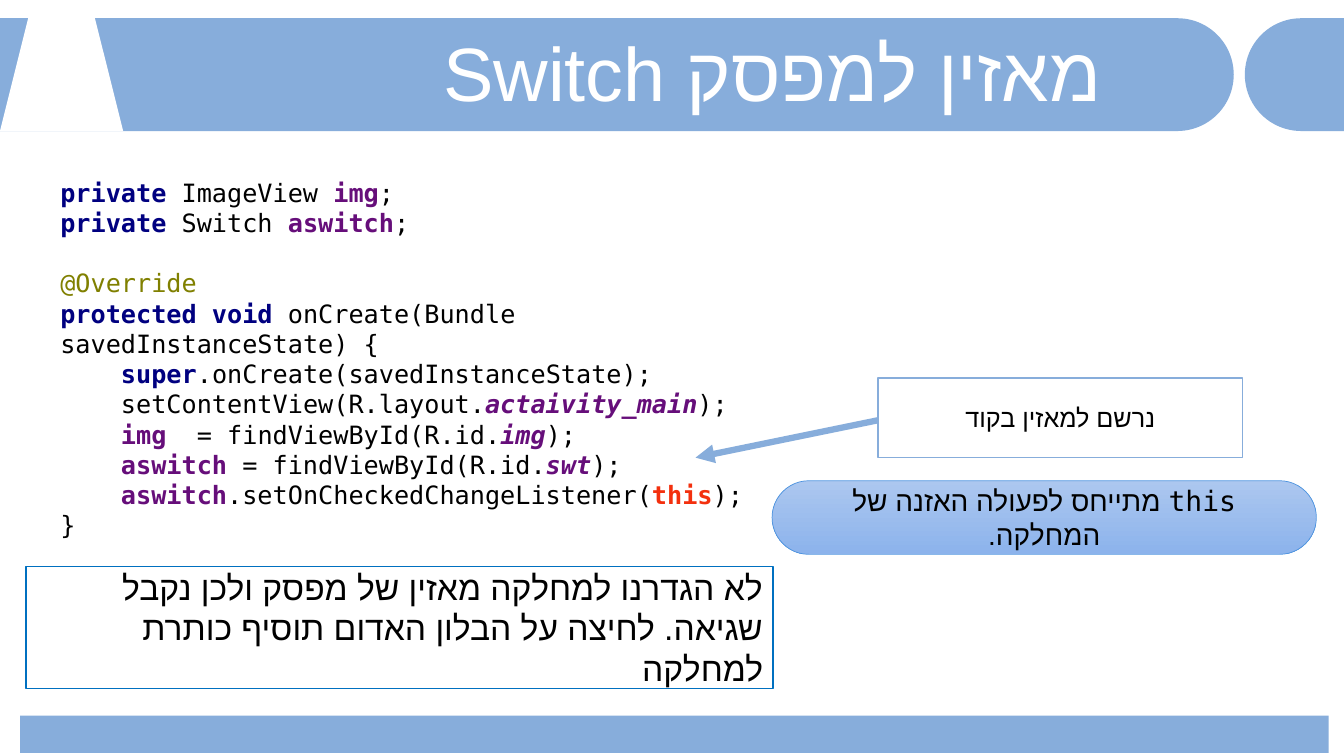
from dataclasses import dataclass
from math import cos, pi, sin

from lxml import etree
from pptx import Presentation
from pptx.dml.color import RGBColor
from pptx.enum.shapes import MSO_CONNECTOR, MSO_SHAPE
from pptx.enum.text import MSO_ANCHOR, MSO_AUTO_SIZE, PP_ALIGN
from pptx.oxml.ns import qn
from pptx.util import Pt

RECTANGLE = MSO_SHAPE.RECTANGLE
TRAPEZOID = MSO_SHAPE.TRAPEZOID
ROUNDED = MSO_SHAPE.ROUNDED_RECTANGLE
STRAIGHT = MSO_CONNECTOR.STRAIGHT
MIDDLE = MSO_ANCHOR.MIDDLE
FIXED_SIZE = MSO_AUTO_SIZE.NONE
GROW_TO_TEXT = MSO_AUTO_SIZE.SHAPE_TO_FIT_TEXT
LEFT, CENTER, RIGHT = PP_ALIGN.LEFT, PP_ALIGN.CENTER, PP_ALIGN.RIGHT

SLIDE_WIDTH, SLIDE_HEIGHT = 960, 540
BAND_TOP, BAND_HEIGHT = 13, 80.6
BLUE, WHITE, BLACK = "87ADDB", "FFFFFF", "000000"
SANS, MONO = "Arial", "DejaVu Sans Mono"
CODE_SIZE = 18
CODE_LINE = 21.6
CODE_INDENT = 43.35


@dataclass(frozen=True)
class Box:
    left: float
    top: float
    width: float
    height: float
    preset: int = RECTANGLE
    fill: str = WHITE
    line: str = ""
    line_width: float = 1


@dataclass(frozen=True)
class HebrewText:
    text: str
    size: float
    font: str = SANS
    color: str = BLACK
    alignment: int = CENTER


@dataclass(frozen=True)
class Token:
    text: str
    color: str = BLACK
    bold: bool = False
    italic: bool = False


@dataclass(frozen=True)
class CodeLine:
    tokens: tuple
    indented: bool = False
    blank_above: bool = False


def keyword(text: str) -> Token:
    return Token(text, "000080", True)


def field(text: str) -> Token:
    return Token(text, "660E7A", True)


def resource(text: str) -> Token:
    return Token(text, "660E7A", True, True)


CODE = (
    CodeLine((keyword("private "), Token("ImageView "), field("img"), Token(";"))),
    CodeLine((keyword("private "), Token("Switch "), field("aswitch"), Token(";"))),
    CodeLine((Token("@Override", "808000"),), blank_above=True),
    CodeLine((keyword("protected void "), Token("onCreate(Bundle savedInstanceState) {"))),
    CodeLine((keyword("super"), Token(".onCreate(savedInstanceState);")), True),
    CodeLine((Token("setContentView(R.layout."), resource("actaivity_main"), Token(");")), True),
    CodeLine((field("img  "), Token("= findViewById(R.id."), resource("img"), Token(");")), True),
    CodeLine((field("aswitch "), Token("= findViewById(R.id."), resource("swt"), Token(");")), True),
    CodeLine((field("aswitch"), Token(".setOnCheckedChangeListener("),
              Token("this", "F3300E", True), Token(");")), True),
    CodeLine((Token("}"),)),
)

TITLE = HebrewText("מאזין למפסק Switch", 54, color=WHITE)
ERROR_NOTE = HebrewText(
    "לא הגדרנו למחלקה מאזין של מפסק ולכן נקבל שגיאה. לחיצה על הבלון האדום תוסיף כותרת למחלקה",
    24, alignment=RIGHT)
LISTENER_NOTE = HebrewText("נרשם למאזין בקוד", 18)
THIS_NOTE = HebrewText("this מתייחס לפעולה האזנה של המחלקה.", 20, MONO)

EMBLEM_BOX = Box(0, BAND_TOP, 88, BAND_HEIGHT, TRAPEZOID)
FOOTER_BOX = Box(14.4, 511.2, 934.6, 26.6, fill=BLUE)
ERROR_BOX = Box(18.7, 404.6, 533.5, 87.1, line="0070C0")
CODE_BOX = Box(36, 132.5, 532.8, 247)
LISTENER_BOX = Box(627.1, 270, 260.6, 56.9, line=BLUE)
THIS_BOX = Box(551.5, 343.4, 388.8, 52.6, ROUNDED, line="4C93DF", line_width=0.5)


def rgb(color: str) -> RGBColor:
    return RGBColor.from_string(color)


def add_box(slide, box: Box):
    shape = slide.shapes.add_shape(
        box.preset, Pt(box.left), Pt(box.top), Pt(box.width), Pt(box.height))
    shape.shadow.inherit = False
    shape.fill.solid()
    shape.fill.fore_color.rgb = rgb(box.fill)
    if box.line:
        shape.line.color.rgb = rgb(box.line)
        shape.line.width = Pt(box.line_width)
    else:
        shape.line.fill.background()
    return shape


def add_capped_band(slide, flat_edge: float, cap_center: float) -> None:
    radius = BAND_HEIGHT / 2
    outward = 1 if cap_center > flat_edge else -1
    angles = [pi * (step / 48 - 0.5) for step in range(49)]
    arc = [(Pt(cap_center + outward * radius * cos(angle)),
            Pt(BAND_TOP + radius + radius * sin(angle))) for angle in angles]
    builder = slide.shapes.build_freeform(Pt(flat_edge), Pt(BAND_TOP))
    builder.add_line_segments(arc + [(Pt(flat_edge), Pt(BAND_TOP + BAND_HEIGHT))])
    band = builder.convert_to_shape()
    band.shadow.inherit = False
    band.fill.solid()
    band.fill.fore_color.rgb = rgb(BLUE)
    band.line.fill.background()


def write_hebrew(shape, content: HebrewText):
    frame = shape.text_frame
    frame.word_wrap = True
    frame.vertical_anchor = MIDDLE
    paragraph = frame.paragraphs[0]
    paragraph.text = content.text
    paragraph.alignment = content.alignment
    paragraph.font.size = Pt(content.size)
    paragraph.font.color.rgb = rgb(content.color)
    paragraph.font.name = content.font
    properties = paragraph._p.get_or_add_pPr()
    properties.set("rtl", "1")
    etree.SubElement(properties.find(qn("a:defRPr")), qn("a:cs"), typeface=SANS)
    return paragraph


def add_title(slide) -> None:
    title = slide.shapes.title
    slide.shapes.element.append(title.element)
    title.left, title.top, title.width, title.height = Pt(167), Pt(26.6), Pt(769.7), Pt(56.9)
    paragraph = write_hebrew(title, TITLE)
    paragraph.line_spacing = 0.9
    paragraph.space_before = Pt(10)
    title.text_frame.auto_size = FIXED_SIZE


def add_code(slide) -> None:
    frame = add_box(slide, CODE_BOX).text_frame
    frame.word_wrap = True
    frame.vertical_anchor = MIDDLE
    frame.auto_size = GROW_TO_TEXT
    for number, line in enumerate(CODE):
        paragraph = frame.add_paragraph() if number else frame.paragraphs[0]
        paragraph.alignment = LEFT
        paragraph.font.size = Pt(CODE_SIZE)
        paragraph.font.name = MONO
        if line.blank_above:
            paragraph.space_before = Pt(CODE_LINE)
        if line.indented:
            paragraph._p.get_or_add_pPr().set("marL", str(Pt(CODE_INDENT)))
        for token in line.tokens:
            run = paragraph.add_run()
            run.text = token.text
            run.font.color.rgb = rgb(token.color)
            run.font.bold = token.bold
            run.font.italic = token.italic


def add_listener_arrow(slide) -> None:
    arrow = slide.shapes.add_connector(STRAIGHT, Pt(627.1), Pt(300.2), Pt(496.8), Pt(326.9))
    arrow.line.color.rgb = rgb(BLUE)
    arrow.line.width = Pt(4.5)
    etree.SubElement(arrow.line._get_or_add_ln(), qn("a:tailEnd"), type="triangle")
    etree.SubElement(arrow.element.spPr, qn("a:effectLst"))


def add_this_note(slide) -> None:
    pill = add_box(slide, THIS_BOX)
    pill.adjustments[0] = 0.5
    pill.fill.gradient()
    pill.fill.gradient_angle = 270
    for stop, color in zip(pill.fill.gradient_stops, ("ACC7EF", "8CB3EC")):
        stop.color.rgb = rgb(color)
    write_hebrew(pill, THIS_NOTE)


def main() -> None:
    presentation = Presentation()
    presentation.slide_width, presentation.slide_height = Pt(SLIDE_WIDTH), Pt(SLIDE_HEIGHT)
    slide = presentation.slides.add_slide(presentation.slide_layouts[5])
    add_capped_band(slide, 0, 841)
    add_box(slide, EMBLEM_BOX)
    add_capped_band(slide, SLIDE_WIDTH, 929.5)
    add_box(slide, FOOTER_BOX)
    add_title(slide)
    write_hebrew(add_box(slide, ERROR_BOX), ERROR_NOTE)
    add_code(slide)
    write_hebrew(add_box(slide, LISTENER_BOX), LISTENER_NOTE)
    add_listener_arrow(slide)
    add_this_note(slide)
    presentation.save("out.pptx")


if __name__ == "__main__":
    main()
